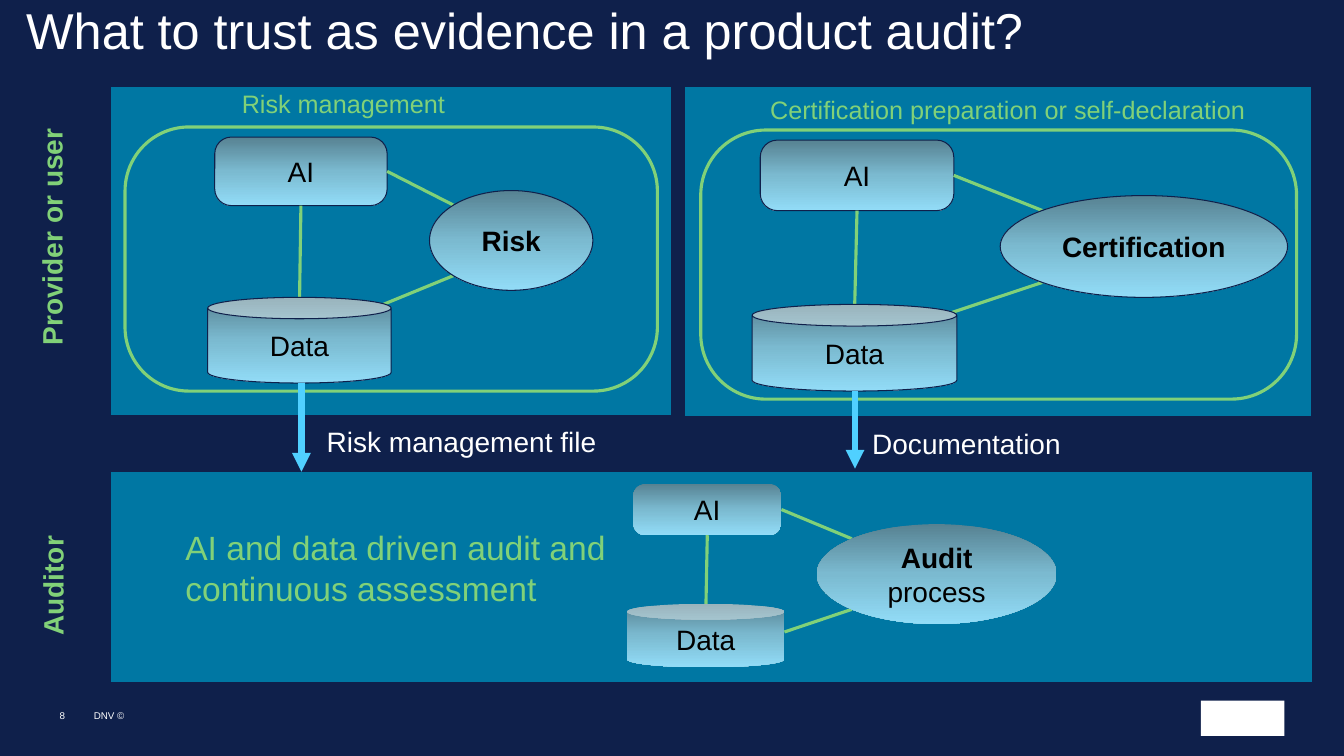
import copy
import pptx
import pptx.util
import pptx.dml.color
import pptx.enum.shapes
import pptx.enum.text
import pptx.oxml.ns
import lxml.etree

Inches = pptx.util.Inches
Kind = pptx.enum.shapes.MSO_SHAPE
Anchor = pptx.enum.text.MSO_ANCHOR
Align = pptx.enum.text.PP_ALIGN
qn = pptx.oxml.ns.qn


class Theme:
    font = "Arial"
    navy, teal, green = "0F204B", "0077A3", "81D178"
    sky, white, black = "50D0FF", "FFFFFF", "000000"
    fade = ((0, "578292"), (0.5, "7BBAD0"), (1, "92DCF7"))
    title, claim, node, head, foot = 36, 24, 20, 18, 7
    thin, link, arrow = 0.75, 2.25, 4.5
    bend = 0.242


# Boxes are left, top, width, height in inches.
TITLE = ("What to trust as evidence in a product audit?", (0.26, 0.09, 13.12, 0.66))
PANELS = [(1.1, 0.86, 5.56, 3.26), (6.79, 0.86, 6.22, 3.27), (1.1, 4.68, 11.92, 2.09)]
FRAMES = [(1.24, 1.26, 5.28, 2.62), (6.95, 1.29, 5.91, 2.67)]
# Each system: AI box, data box, goal box, goal words (text, bold),
# start of the link from data to goal, whether nodes are outlined
SYSTEMS = [
    ((2.13, 1.36, 1.71, 0.68), (2.06, 2.95, 1.82, 0.85), (4.26, 1.89, 1.62, 0.99),
     [("Risk", True)], (3.29, 3.23), True),
    ((7.54, 1.39, 1.92, 0.7), (7.46, 3.02, 2.03, 0.86), (9.92, 1.94, 2.85, 1.01),
     [("Certification", True)], (8.84, 3.3), True),
    ((6.28, 4.8, 1.47, 0.51), (6.22, 5.99, 1.56, 0.63), (8.1, 5.2, 2.38, 0.99),
     [("Audit", True), (" process", False)], (7.78, 6.27), False),
]
ARROWS = [(2.99, 3.8, 4.68), (8.48, 3.88, 4.65)]  # x, top, tip
HEADS = [
    ("Risk management", (2.3, 0.83, 2.93, 0.4), Theme.head),
    ("Certification preparation or self-declaration", (7.54, 0.89, 5.75, 0.4), Theme.head),
    ("AI and data driven audit and continuous assessment", (1.74, 5.18, 4.6, 0.91),
     Theme.claim),
]
ROLES = [("Provider or user", (-0.8, 1.99, 2.63, 0.44)),
         ("Auditor", (-0.6, 5.06, 2.25, 0.44))]
NOTES = [
    ("Risk management file", (3.24, 4.21, 2.7, 0.34), Theme.node),
    ("Documentation", (8.65, 4.23, 1.89, 0.34), Theme.node),
    ("DNV ©", (0.93, 7.04, 0.31, 0.12), Theme.foot),
    ("8", (0.59, 7.04, 0.29, 0.17), Theme.foot),
]
BADGE = (11.91, 6.95, 0.83, 0.35)


def rgb(code):
    return pptx.dml.color.RGBColor.from_string(code)


def style(para, size, color, bold=None):
    font = para.font
    font.name, font.size, font.bold = Theme.font, pptx.util.Pt(size), bold
    font.color.rgb = rgb(color)


def clear(frame):
    frame.margin_left = frame.margin_right = 0
    frame.margin_top = frame.margin_bottom = 0


def shape(slide, kind, box, fill=None, line=None, width=Theme.thin):
    item = slide.shapes.add_shape(kind, *map(Inches, box))
    item.shadow.inherit = False
    if fill:
        item.fill.solid()
        item.fill.fore_color.rgb = rgb(fill)
    else:
        item.fill.background()
    if line:
        item.line.color.rgb = rgb(line)
        item.line.width = pptx.util.Pt(width)
    else:
        item.line.fill.background()
    if kind == Kind.ROUNDED_RECTANGLE:
        item.adjustments[0] = Theme.bend
    return item


def shade(item):
    """Fill a shape with the three-stop fade, dark at the top."""
    item.fill.gradient()
    item.fill.gradient_angle = 270
    stops = item._element.spPr.find(".//" + qn("a:gsLst"))
    stops.append(copy.deepcopy(stops[-1]))
    for stop, (spot, color) in zip(item.fill.gradient_stops, Theme.fade):
        stop.position = spot
        stop.color.rgb = rgb(color)


def node(slide, kind, box, words, lined):
    item = shape(slide, kind, box, line=Theme.navy if lined else None)
    shade(item)
    frame = item.text_frame
    frame.word_wrap = True
    frame.vertical_anchor = Anchor.MIDDLE
    para = frame.paragraphs[0]
    para.alignment = Align.CENTER
    for text, bold in words:
        run = para.add_run()
        run.text = text
        if len(words) > 1:
            run.font.bold = bold
    style(para, Theme.node, Theme.black, words[0][1] if len(words) == 1 else None)
    return item


def join(slide, start, end, color=Theme.green, width=Theme.link):
    line = slide.shapes.add_connector(pptx.enum.shapes.MSO_CONNECTOR.STRAIGHT,
                                      *map(Inches, start + end))
    line.line.color.rgb = rgb(color)
    line.line.width = pptx.util.Pt(width)
    lxml.etree.SubElement(line._element.spPr, qn("a:effectLst"))
    return line


def system(slide, ai, data, goal, words, start, lined):
    left, top, wide, high = ai
    brain = node(slide, Kind.ROUNDED_RECTANGLE, ai, [("AI", False)], lined)
    inset = (1 - 0.5 ** 0.5) / 2  # where the diagonals meet an ellipse
    edge = goal[0] + inset * goal[2]
    upper, lower = (goal[1] + part * goal[3] for part in (inset, 1 - inset))
    down = join(slide, (left + wide / 2, top + high), (data[0] + data[2] / 2, data[1] + 0.1))
    down.begin_connect(brain, 2)
    side = join(slide, (left + wide, top + high / 2), (edge, upper))
    side.begin_connect(brain, 3)
    join(slide, start, (edge, lower))
    node(slide, Kind.OVAL, goal, words, lined)
    node(slide, Kind.CAN, data, [("Data", False)], lined)


def label(slide, text, box, size, color, bold=None):
    item = slide.shapes.add_textbox(*map(Inches, box))
    item.text_frame.word_wrap = True
    para = item.text_frame.paragraphs[0]
    para.text = text
    style(para, size, color, bold)
    return item


def main():
    deck = pptx.Presentation()
    deck.slide_width, deck.slide_height = Inches(13.33), Inches(7.5)
    slide = deck.slides.add_slide(deck.slide_layouts[5])
    slide.background.fill.solid()
    slide.background.fill.fore_color.rgb = rgb(Theme.navy)

    text, box = TITLE
    title = slide.shapes.title
    title.left, title.top, title.width, title.height = map(Inches, box)
    title.text_frame.text = text
    title.text_frame.vertical_anchor = Anchor.TOP
    clear(title.text_frame)
    para = title.text_frame.paragraphs[0]
    para.alignment = Align.LEFT
    para.line_spacing = 0.83
    style(para, Theme.title, Theme.white)

    for box in PANELS:
        shape(slide, Kind.RECTANGLE, box, Theme.teal, Theme.navy)
    for box in FRAMES:
        shape(slide, Kind.ROUNDED_RECTANGLE, box, None, Theme.green, Theme.link)
    for parts in SYSTEMS:
        system(slide, *parts)
    for x, top, tip in ARROWS:
        arrow = join(slide, (x, top), (x, tip), Theme.sky, Theme.arrow)
        ends = arrow.line._get_or_add_ln()
        lxml.etree.SubElement(ends, qn("a:tailEnd"), type="triangle")

    for text, box, size in HEADS:
        label(slide, text, box, size, Theme.green)
    for text, box in ROLES:
        label(slide, text, box, Theme.node, Theme.green, True).rotation = 270
    for text, box, size in NOTES:
        note = label(slide, text, box, size, Theme.white)
        note.text_frame.word_wrap = False
        clear(note.text_frame)
    shape(slide, Kind.RECTANGLE, BADGE, Theme.white)
    deck.save("out.pptx")


if __name__ == "__main__":
    main()
